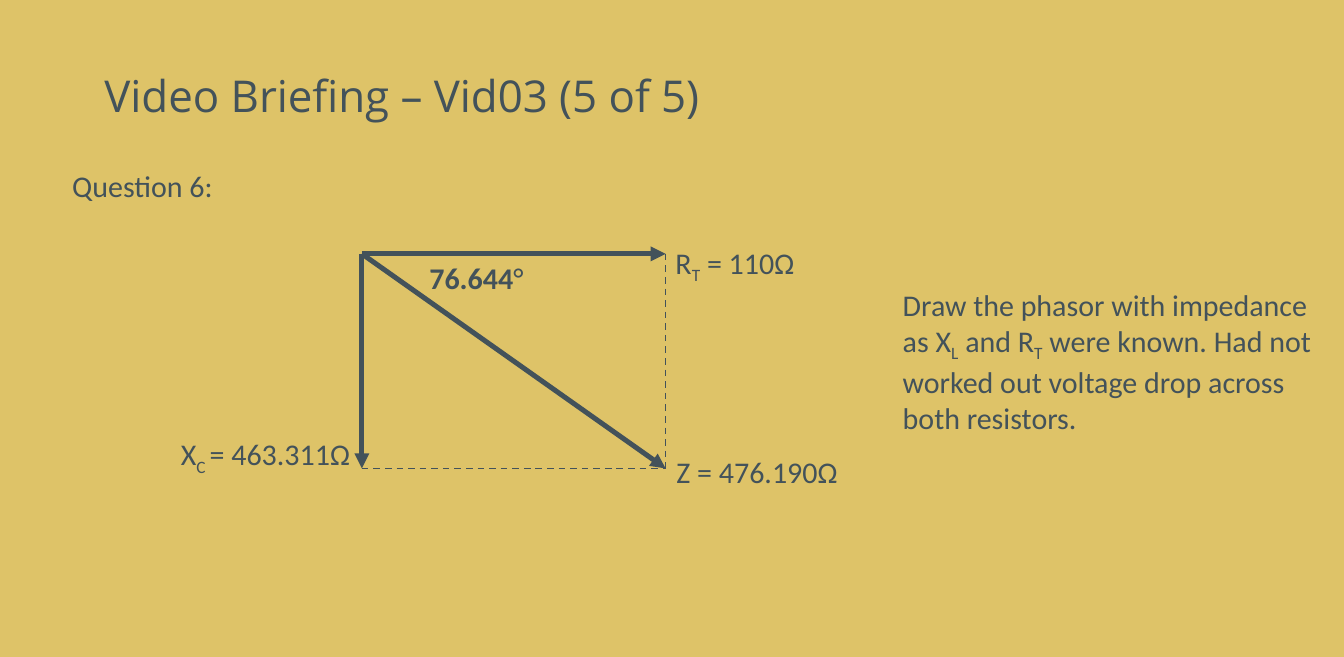
from lxml.etree import SubElement as Sub
from pptx import Presentation
from pptx.dml.color import RGBColor as Rgb
from pptx.enum.dml import MSO_LINE as Dash
from pptx.enum.shapes import MSO_CONNECTOR as Conn
from pptx.enum.text import MSO_ANCHOR as Anchor, MSO_AUTO_SIZE as Auto
from pptx.oxml.ns import qn
from pptx.util import Cm, Pt

COLORS = {"back": "DEC368", "ink": "43525A"}
INK = Rgb.from_string(COLORS["ink"])


def add_text(slide, box, runs, size=18, font="Calibri", wrap=True):
    """Place one paragraph; each run is (text, style), style "", "sub" or "bold"."""
    frame = slide.shapes.add_textbox(*map(Cm, box)).text_frame
    frame.word_wrap = wrap
    para = frame.paragraphs[0]
    for text, style in runs:
        run = para.add_run()
        run.text = text
        run.font.name = font
        run.font.size = Pt(size)
        run.font.color.rgb = INK
        if style == "bold":
            run.font.bold = True
        elif style == "sub":
            run._r.get_or_add_rPr().set("baseline", "-25000")
    return frame


def add_line(slide, start, end, arrow):
    """Draw a thick arrow, or a thin dashed guide."""
    line = slide.shapes.add_connector(Conn.STRAIGHT, *map(Cm, start + end))
    line.line.color.rgb = INK
    line.line.width = Pt(3 if arrow else 1)
    if arrow:
        Sub(line.line._get_or_add_ln(), qn("a:tailEnd"), type="triangle")
    else:
        line.line.dash_style = Dash.DASH
    Sub(line._element.spPr, qn("a:effectLst"))


def add_title(slide, box):
    runs = [("Video Briefing – Vid03 (5 of 5)", "")]
    frame = add_text(slide, box, runs, 26.3, "Open Sans")
    frame.vertical_anchor = Anchor.MIDDLE
    frame.paragraphs[0].line_spacing = 0.9


def add_phasor(slide, box):
    """Draw the impedance phasor; labels sit at offsets from its origin."""
    left, top, width, height = box
    origin, far = (left, top), (left + width, top + height)
    right, low = (left + width, top), (left, top + height)
    for end in (low, right):
        add_line(slide, origin, end, True)
    for start in (low, right):
        add_line(slide, start, far, False)
    add_line(slide, origin, far, True)

    labels = [
        (6.39, -0.33, 3.07, [("R", ""), ("T", "sub"), (" = 110Ω", "")]),
        (-4.08, 3.73, 4.17, [("X", ""), ("C ", "sub"), ("= 463.311Ω", "")]),
        (6.41, 4.09, 3.96, [("Z = 476.190Ω", "")]),
        (1.18, 0, 2.51, [("76.644", "bold"), ("°", "")]),
    ]
    for dx, dy, wide, runs in labels:
        frame = add_text(slide, (left + dx, top + dy, wide, 1.02), runs, wrap=False)
        frame.auto_size = Auto.SHAPE_TO_FIT_TEXT


def add_note(slide, box):
    add_text(slide, box, [
        ("Draw the phasor with impedance as X", ""), ("L", "sub"),
        (" and R", ""), ("T", "sub"),
        (" were known. Had not worked out voltage drop across both resistors.", ""),
    ])


def main():
    deck = Presentation()
    deck.slide_width, deck.slide_height = Cm(28.45), Cm(13.9)
    slide = deck.slides.add_slide(deck.slide_layouts[6])
    fill = slide.background.fill
    fill.solid()
    fill.fore_color.rgb = Rgb.from_string(COLORS["back"])

    add_title(slide, (1.96, 0.74, 24.54, 2.69))
    add_text(slide, (1.28, 3.43, 26.8, 1.02), [("Question 6:", "")])
    add_phasor(slide, (7.66, 5.37, 6.43, 4.54))
    add_note(slide, (18.86, 5.93, 9.22, 3.33))
    deck.save("out.pptx")


if __name__ == "__main__":
    main()
